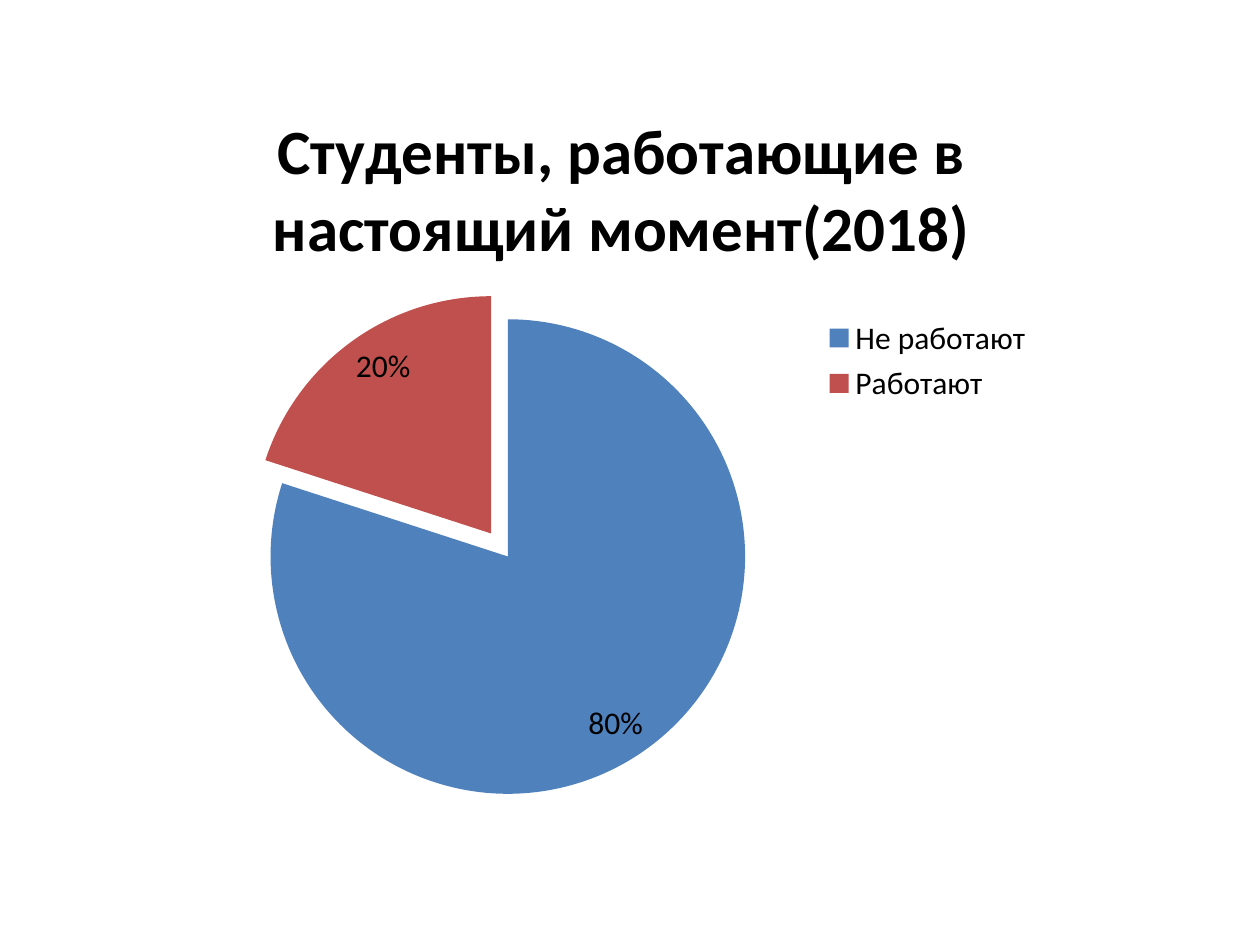
import pptx
import pptx.chart.data
import pptx.dml.color
import pptx.enum.chart
import pptx.oxml
import pptx.util
from pptx.oxml.ns import nsdecls

Pt = pptx.util.Pt
COLORS = {"idle": "4F81BD", "working": "C0504D", "text": "000000"}
FONT = "Calibri"


def rgb(name):
    return pptx.dml.color.RGBColor.from_string(COLORS[name])


def style_font(font, size=18, bold=False, color="text"):
    font.name = FONT
    font.size = Pt(size)
    font.bold = bold
    font.color.rgb = rgb(color)


def add_text(p, text, **fmt):
    r = p.add_run()
    r.text = text
    style_font(r.font, **fmt)


def make_layout(x, y, w, h, inner=False):
    target = '<c:layoutTarget val="inner"/>' if inner else ""
    return pptx.oxml.parse_xml(
        f'<c:layout {nsdecls("c")}><c:manualLayout>{target}'
        '<c:xMode val="edge"/><c:yMode val="edge"/>'
        f'<c:x val="{x}"/><c:y val="{y}"/><c:w val="{w}"/><c:h val="{h}"/>'
        '</c:manualLayout></c:layout>')


def place_plot_area(chart, *box):
    area = chart.element.chart.plotArea
    for old in area.xpath("c:layout"):
        area.remove(old)
    area.insert(0, make_layout(*box, inner=True))


def place_legend(chart, *box):
    legend = chart.legend._element
    for old in legend.xpath("c:layout"):
        legend.remove(old)
    legend.xpath("c:legendPos")[0].addnext(make_layout(*box))


def explode_point(series, index, percent):
    explosion = pptx.oxml.parse_xml(
        f'<c:explosion {nsdecls("c")} val="{percent}"/>')
    dpt = series._element.xpath(f'c:dPt[c:idx/@val="{index}"]')[0]
    dpt.xpath("c:spPr")[0].addprevious(explosion)


def add_pie(s, title_runs, shares, x, y, w, h):
    data = pptx.chart.data.CategoryChartData()
    data.categories = [name for name, value, color in shares]
    data.add_series("Series 1", [value for name, value, color in shares])
    chart = s.shapes.add_chart(
        pptx.enum.chart.XL_CHART_TYPE.PIE,
        Pt(x), Pt(y), Pt(w), Pt(h), data).chart
    style_font(chart.font)

    chart.has_title = True
    p = chart.chart_title.text_frame.paragraphs[0]
    for text in title_runs:
        add_text(p, text, size=36, bold=True)
    chart.chart_title.include_in_layout = False

    chart.has_legend = True
    chart.legend.position = pptx.enum.chart.XL_LEGEND_POSITION.RIGHT
    chart.legend.include_in_layout = False
    style_font(chart.legend.font)

    plot = chart.plots[0]
    plot.vary_by_categories = True
    for i, (name, value, color) in enumerate(shares):
        fill = plot.series[0].points[i].format.fill
        fill.solid()
        fill.fore_color.rgb = rgb(color)

    plot.has_data_labels = True
    labels = plot.data_labels
    labels.show_percentage = True
    labels.show_value = False
    labels.number_format = "0%"
    labels.number_format_is_linked = False
    labels.position = pptx.enum.chart.XL_LABEL_POSITION.INSIDE_END
    style_font(labels.font)
    return chart


def main():
    prs = pptx.Presentation()
    prs.slide_width, prs.slide_height = Pt(720), Pt(540)
    s = prs.slides.add_slide(prs.slide_layouts[6])
    title_runs = ["Студенты, работающие в настоящий момент", "(2018)"]
    shares = [("Не работают", 80, "idle"), ("Работают", 20, "working")]
    chart = add_pie(s, title_runs, shares, 31, 49, 648, 430.5)
    explode_point(chart.plots[0].series[0], 1, 12)
    place_plot_area(chart, 0.19, 0.31, 0.42, 0.63)
    place_legend(chart, 0.67, 0.3, 0.2, 0.13)
    prs.save("out.pptx")


if __name__ == "__main__":
    main()
